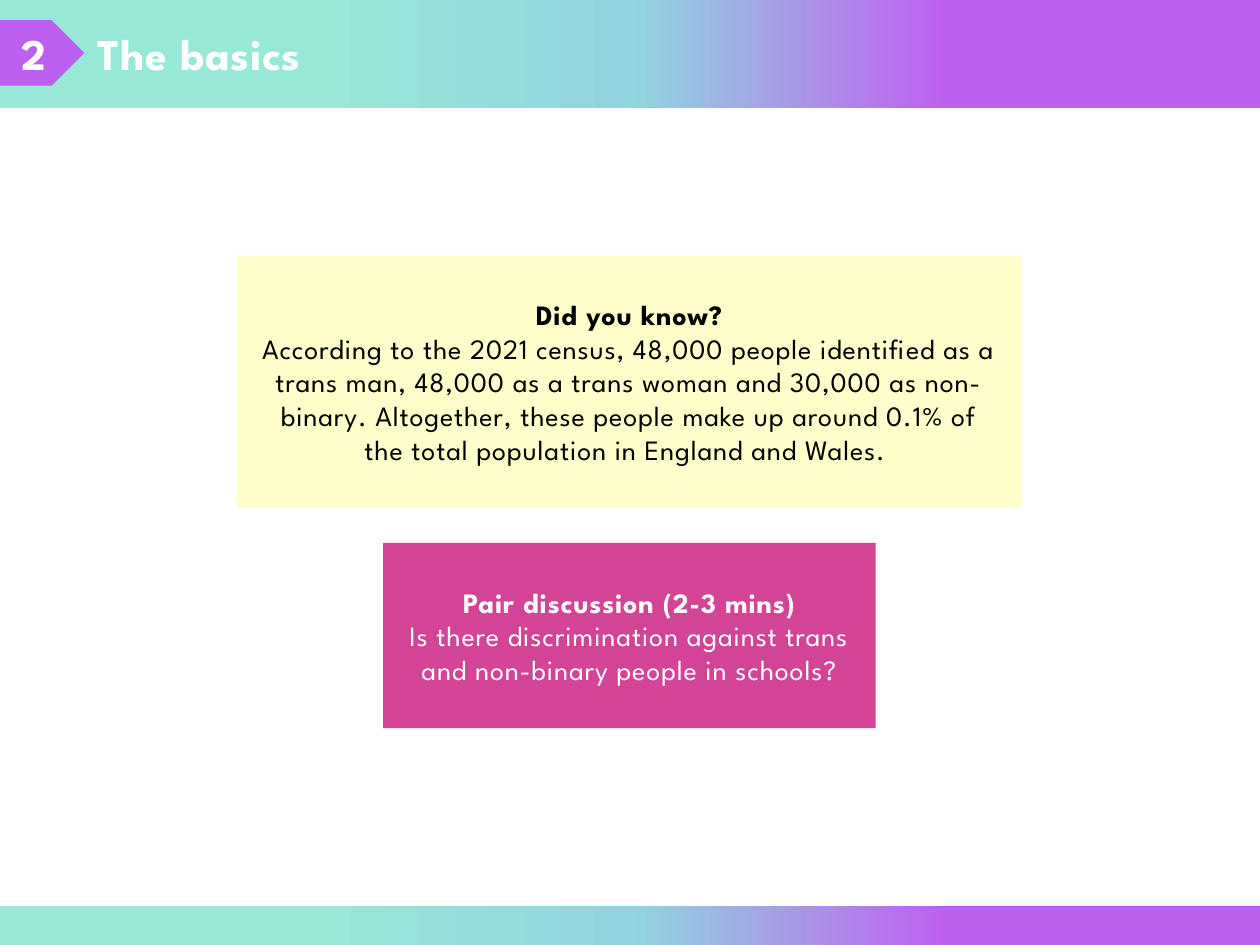
"""Build the slide "The basics" with its fact and discussion boxes."""
from copy import deepcopy

from pptx import Presentation
from pptx.dml.color import RGBColor
from pptx.enum.shapes import MSO_SHAPE
from pptx.enum.text import MSO_ANCHOR, MSO_AUTO_SIZE, PP_ALIGN
from pptx.util import Inches, Pt

RECTANGLE, PENTAGON = MSO_SHAPE.RECTANGLE, MSO_SHAPE.PENTAGON
TOP, MIDDLE = MSO_ANCHOR.TOP, MSO_ANCHOR.MIDDLE
LEFT, CENTER = PP_ALIGN.LEFT, PP_ALIGN.CENTER
FIT_SHAPE = MSO_AUTO_SIZE.SHAPE_TO_FIT_TEXT
TITLE_ONLY = 5
COLORS = {
    "mint": "97E8D7", "sky": "91D6DE", "violet": "BD60EF",
    "pink": "D34497", "cream": "FFFFCC", "white": "FFFFFF", "black": "000000",
}
BAR_STOPS = [(0.25, "mint"), (0.5, "sky"), (0.75, "violet")]


class SlideStyle:
    """Hold the look of the deck and draw elements on the current page."""

    font = "League Spartan"
    heading_size = 25
    body_size = 16
    box_inset = Inches(0.2)

    def __init__(self, page):
        """Start drawing on the given page."""
        self.page = page

    def color(self, name):
        """Return the named colour."""
        return RGBColor.from_string(COLORS[name])

    def shape(self, kind, left, top, width, height):
        """Add a preset shape without line or shadow."""
        shape = self.page.shapes.add_shape(
            kind, Inches(left), Inches(top), Inches(width), Inches(height))
        shape.shadow.inherit = False
        shape.line.fill.background()
        return shape

    def set_text(self, para, text, size, color, bold, align, spacing=0):
        """Fill and format one paragraph, with letter spacing in points."""
        para.text = text
        para.alignment = align
        font = para.font
        font.name, font.size, font.bold = self.font, Pt(size), bold
        font.color.rgb = self.color(color)
        if spacing:
            font._element.set("spc", str(round(spacing * 100)))

    def bar(self, top, height):
        """Add a full-width gradient bar."""
        bar = self.shape(RECTANGLE, 0, top, 10, height)
        bar.fill.gradient()
        bar.fill.gradient_angle = 0
        first = bar.fill.gradient_stops[0]._gs
        first.addnext(deepcopy(first))
        for stop, (position, name) in zip(bar.fill.gradient_stops, BAR_STOPS):
            stop.position = position
            stop.color.rgb = self.color(name)

    def number_tag(self, text):
        """Add the section number on its arrow tag."""
        tag = self.shape(PENTAGON, 0, 0.16, 0.67, 0.52)
        tag.fill.solid()
        tag.fill.fore_color.rgb = self.color("violet")
        frame = tag.text_frame
        frame.vertical_anchor = MIDDLE
        self.set_text(frame.paragraphs[0], text, self.heading_size, "white", True, CENTER)

    def title(self, text):
        """Place the title over the top bar."""
        title = self.page.shapes.title
        title.left, title.top = Inches(0.67), Inches(0.16)
        title.width, title.height = Inches(8.62), Inches(0.52)
        frame = title.text_frame
        frame.word_wrap = True
        frame.auto_size = FIT_SHAPE
        frame.vertical_anchor = TOP
        self.set_text(frame.paragraphs[0], text, self.heading_size, "white", True, LEFT, 0.5)
        self.page.shapes._spTree.append(title._element)

    def box(self, left, top, width, height, fill, color, heading, body):
        """Add a filled box with a bold heading above its text."""
        box = self.shape(RECTANGLE, left, top, width, height)
        box.fill.solid()
        box.fill.fore_color.rgb = self.color(fill)
        frame = box.text_frame
        frame.word_wrap = True
        frame.vertical_anchor = MIDDLE
        frame.margin_left = frame.margin_right = self.box_inset
        frame.margin_top = frame.margin_bottom = self.box_inset
        self.set_text(frame.paragraphs[0], heading, self.body_size, color, True, CENTER, 0.5)
        self.set_text(frame.add_paragraph(), body, self.body_size, color, False, CENTER, 0.5)


def main():
    """Build and save the deck."""
    deck = Presentation()
    deck.slide_width, deck.slide_height = Inches(10), Inches(7.5)
    style = SlideStyle(deck.slides.add_slide(deck.slide_layouts[TITLE_ONLY]))
    style.bar(7.19, 0.31)
    style.bar(-0.01, 0.87)
    style.number_tag("2")
    style.title("The basics")
    style.box(
        3.04, 4.31, 3.91, 1.47, "pink", "white", "Pair discussion (2-3 mins)",
        "Is there discrimination against trans and non-binary people in schools?")
    style.box(
        1.88, 2.03, 6.23, 2, "cream", "black", "Did you know?",
        "According to the 2021 census, 48,000 people identified as a trans man, "
        "48,000 as a trans woman and 30,000 as non-binary. Altogether, these people "
        "make up around 0.1% of the total population in England and Wales. ")
    deck.save("out.pptx")


if __name__ == "__main__":
    main()
